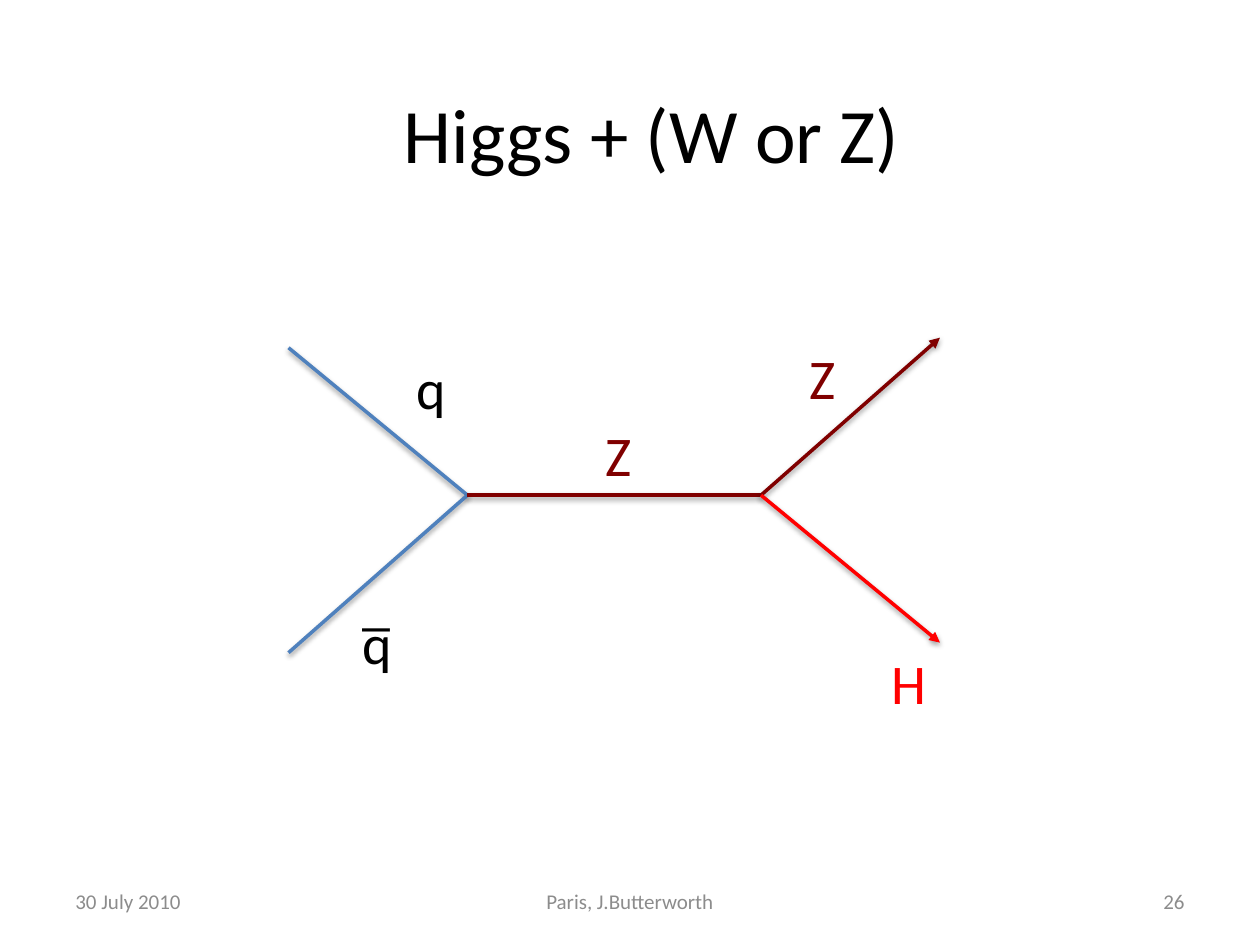
from dataclasses import dataclass
from lxml.etree import SubElement
from pptx import Presentation
from pptx.dml.color import RGBColor as RGB
from pptx.enum.shapes import MSO_CONNECTOR as Connector
from pptx.enum.text import MSO_ANCHOR as Anchor, PP_ALIGN as Align
from pptx.oxml.ns import qn
from pptx.util import Inches, Pt


@dataclass(frozen=True)
class Theme:
    font: str = "Calibri"
    ink: str = "000000"
    footer: str = "8C8C8C"
    quark: str = "4F81BD"
    boson: str = "800000"
    higgs: str = "FF0000"
    title_size: int = 44
    label_size: int = 32
    footer_size: int = 12
    line_width: int = 2


THEME = Theme()
WIDTH, HEIGHT = 10, 7.5
MARGIN = 0.05 * WIDTH
LABEL_HEIGHT = 0.64

TITLE = "Higgs + (W or Z)"
FOOTERS = [
    ("30 July 2010", MARGIN, 2.33, Align.LEFT),
    ("Paris, J.Butterworth", (WIDTH - 3.17) / 2, 3.17, Align.CENTER),
    ("26", WIDTH - MARGIN - 2.33, 2.33, Align.RIGHT),
]

ARM, RISE, FALL = 1.42, 1.25, 1.17
ANNIHILATION = (3.71, 3.93)
EMISSION = (6.04, 3.93)


def offset(vertex, dx, dy):
    return vertex[0] + dx, vertex[1] + dy


PROPAGATORS = [
    (offset(ANNIHILATION, -ARM, -FALL), ANNIHILATION, THEME.quark, False),
    (offset(ANNIHILATION, -ARM, RISE), ANNIHILATION, THEME.quark, False),
    (ANNIHILATION, EMISSION, THEME.boson, False),
    (EMISSION, offset(EMISSION, ARM, -RISE), THEME.boson, True),
    (EMISSION, offset(EMISSION, ARM, FALL), THEME.higgs, True),
]
LABELS = [
    ("q", 3.21, 2.76, 0.44, THEME.ink),
    ("q", 2.78, 4.78, 0.85, THEME.ink),
    ("_", 2.78, 4.46, 0.43, THEME.ink),
    ("Z", 4.71, 3.29, 0.5, THEME.boson),
    ("Z", 6.33, 2.68, 0.58, THEME.boson),
    ("H", 6.98, 5.1, 0.48, THEME.higgs),
]


def place(shape, left, top, width, height):
    shape.left, shape.top = Inches(left), Inches(top)
    shape.width, shape.height = Inches(width), Inches(height)


def write(frame, text, size, color, align, anchor):
    frame.word_wrap = True
    frame.vertical_anchor = anchor
    paragraph = frame.paragraphs[0]
    paragraph.alignment = align
    run = paragraph.add_run()
    run.text = text
    run.font.name = THEME.font
    run.font.size = Pt(size)
    run.font.color.rgb = RGB.from_string(color)


def add_text(slide, text, box, size, color, align=Align.LEFT, anchor=Anchor.TOP):
    textbox = slide.shapes.add_textbox(*map(Inches, box))
    write(textbox.text_frame, text, size, color, align, anchor)


def add_shadow(properties):
    effects = SubElement(properties, qn("a:effectLst"))
    shadow = SubElement(effects, qn("a:outerShdw"), blurRad=str(Pt(3.1)),
                        dist=str(Pt(1.6)), dir="5400000", rotWithShape="0")
    black = SubElement(shadow, qn("a:srgbClr"), val=THEME.ink)
    SubElement(black, qn("a:alpha"), val="38000")


def add_propagator(slide, start, end, color, outgoing):
    propagator = slide.shapes.add_connector(
        Connector.STRAIGHT, *map(Inches, start + end))
    propagator.line.color.rgb = RGB.from_string(color)
    propagator.line.width = Pt(THEME.line_width)
    properties = propagator._element.spPr
    if outgoing:
        SubElement(properties.find(qn("a:ln")), qn("a:tailEnd"), type="triangle")
    add_shadow(properties)


def main():
    deck = Presentation()
    deck.slide_width, deck.slide_height = Inches(WIDTH), Inches(HEIGHT)
    slide = deck.slides.add_slide(deck.slide_layouts[5])

    title = slide.shapes.title
    place(title, MARGIN, 0.56, 9.35, 0.99)
    write(title.text_frame, TITLE, THEME.title_size, THEME.ink,
          Align.CENTER, Anchor.MIDDLE)

    for text, left, width, align in FOOTERS:
        add_text(slide, text, (left, 6.95, width, 0.4), THEME.footer_size,
                 THEME.footer, align, Anchor.MIDDLE)
    for propagator in PROPAGATORS:
        add_propagator(slide, *propagator)
    for text, left, top, width, color in LABELS:
        add_text(slide, text, (left, top, width, LABEL_HEIGHT),
                 THEME.label_size, color)

    deck.save("out.pptx")


if __name__ == "__main__":
    main()
